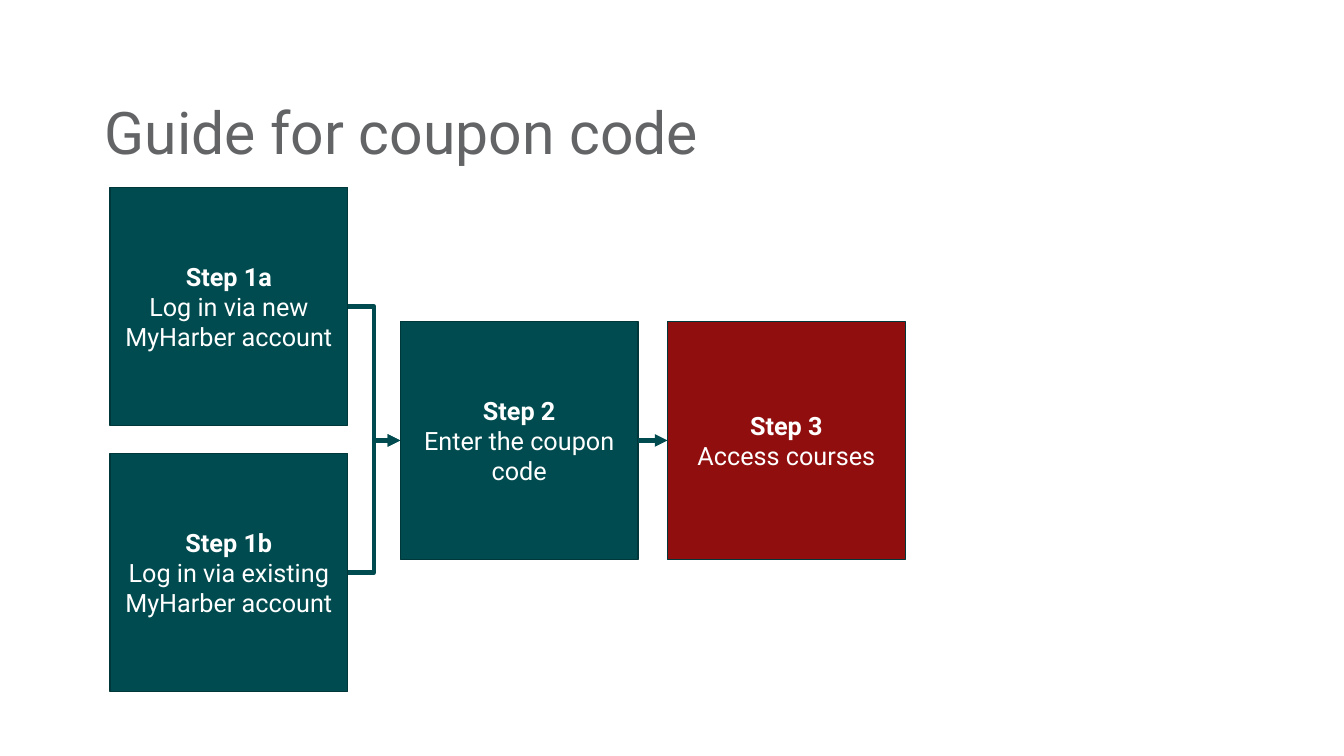
from lxml.etree import SubElement
from pptx import Presentation
from pptx.dml.color import RGBColor
from pptx.enum.shapes import MSO_CONNECTOR, MSO_SHAPE
from pptx.enum.text import MSO_ANCHOR, PP_ALIGN
from pptx.oxml.ns import qn
from pptx.util import Inches, Pt

TEAL = RGBColor(0x00, 0x4B, 0x4F)
DARK_TEAL = RGBColor(0x00, 0x37, 0x3A)
RED = RGBColor(0x90, 0x0F, 0x0E)
GREY = RGBColor(0x63, 0x64, 0x66)
WHITE = RGBColor(0xFF, 0xFF, 0xFF)
FONT = "Roboto"
SIDE = 2.36

TITLE = "Guide for coupon code"
STEPS = {
    "Step 1a": ("Log in via new MyHarber account", 1.09, 1.86, TEAL),
    "Step 2": ("Enter the coupon code", 3.97, 3.19, TEAL),
    "Step 1b": ("Log in via existing MyHarber account", 1.09, 4.5, TEAL),
    "Step 3": ("Access courses", 6.62, 3.19, RED),
}
ARROWS = [
    ("Step 1b", "Step 2", MSO_CONNECTOR.ELBOW),
    ("Step 1a", "Step 2", MSO_CONNECTOR.ELBOW),
    ("Step 2", "Step 3", MSO_CONNECTOR.STRAIGHT),
]


def add_run(p, text, size, color, bold=False):
    r = p.add_run()
    r.text = text
    r.font.name = FONT
    r.font.size = Pt(size)
    r.font.bold = bold
    r.font.color.rgb = color


def add_title(s):
    sp = s.shapes.title
    sp.left, sp.top = Inches(1.04), Inches(0.99)
    sp.width, sp.height = Inches(9.66), Inches(0.7)
    tf = sp.text_frame
    tf.margin_left = 0
    tf.vertical_anchor = MSO_ANCHOR.MIDDLE
    p = tf.paragraphs[0]
    p.alignment = PP_ALIGN.LEFT
    p.line_spacing = 0.9
    add_run(p, TITLE, 42, GREY)


def add_step(s, name, action, left, top, fill):
    sp = s.shapes.add_shape(MSO_SHAPE.RECTANGLE, Inches(left), Inches(top),
                            Inches(SIDE), Inches(SIDE))
    sp.shadow.inherit = False
    sp.fill.solid()
    sp.fill.fore_color.rgb = fill
    sp.line.color.rgb = DARK_TEAL
    sp.line.width = Pt(1)
    tf = sp.text_frame
    tf.word_wrap = True
    tf.vertical_anchor = MSO_ANCHOR.MIDDLE
    for p, text, bold in ((tf.paragraphs[0], name, True),
                          (tf.add_paragraph(), action, False)):
        p.alignment = PP_ALIGN.CENTER
        add_run(p, text, 18, WHITE, bold)
    return sp


def add_arrow(s, start, end, kind):
    cxn = s.shapes.add_connector(kind, 0, 0, 0, 0)
    cxn.begin_x, cxn.begin_y = start.left + start.width, start.top + start.height // 2
    cxn.end_x, cxn.end_y = end.left, end.top + end.height // 2
    cxn.begin_connect(start, 3)
    cxn.end_connect(end, 1)
    cxn.line.color.rgb = TEAL
    cxn.line.width = Pt(3)
    SubElement(cxn.line._get_or_add_ln(), qn("a:tailEnd"), type="triangle")
    SubElement(cxn._element.spPr, qn("a:effectLst"))


def main():
    prs = Presentation()
    prs.slide_width, prs.slide_height = Inches(13.33), Inches(7.5)
    s = prs.slides.add_slide(prs.slide_layouts[5])
    add_title(s)
    boxes = {name: add_step(s, name, *step) for name, step in STEPS.items()}
    for start, end, kind in ARROWS:
        add_arrow(s, boxes[start], boxes[end], kind)
    prs.save("out.pptx")


if __name__ == "__main__":
    main()
